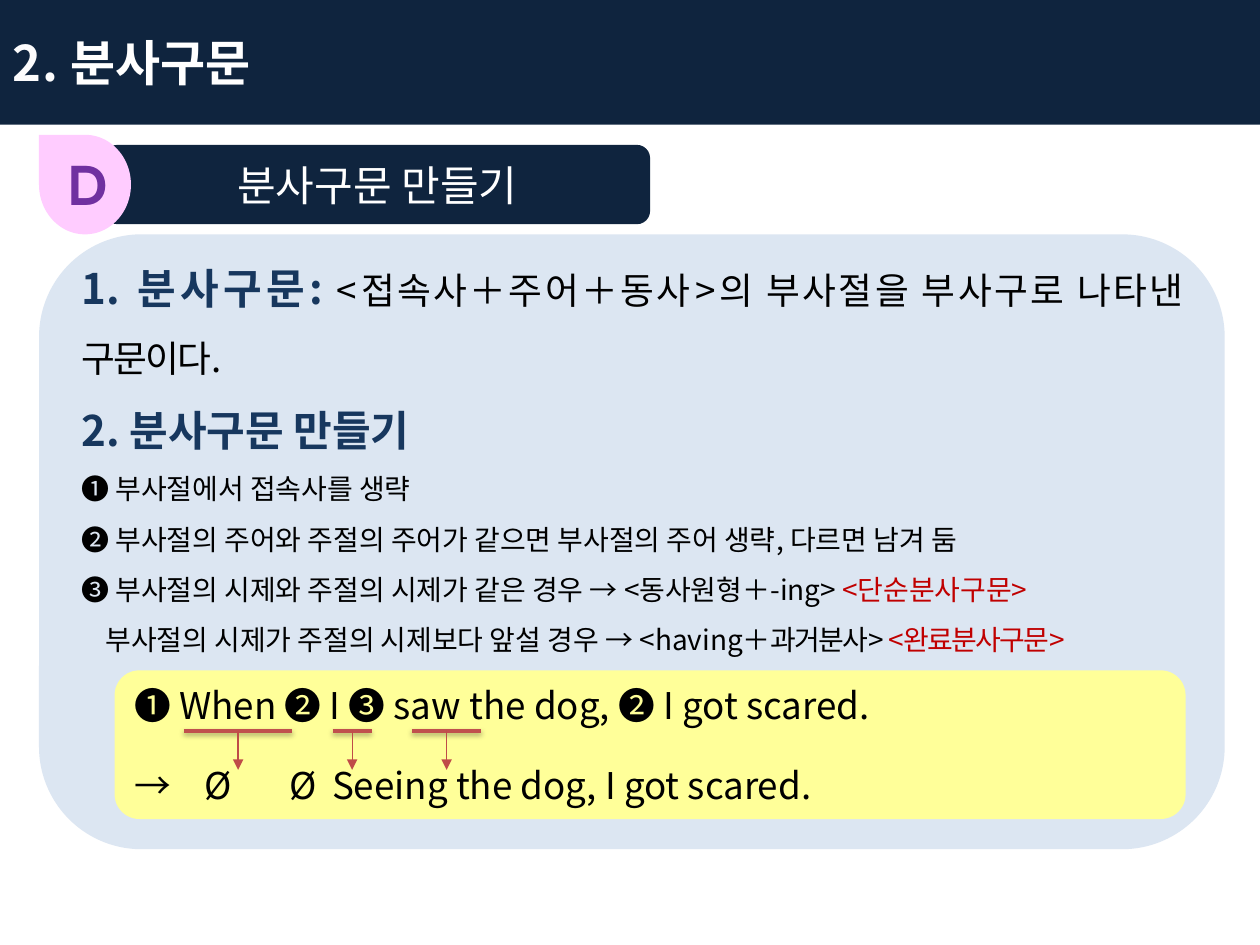
from lxml import etree
from pptx import Presentation
from pptx.dml.color import RGBColor
from pptx.enum.shapes import MSO_CONNECTOR, MSO_SHAPE
from pptx.enum.text import MSO_ANCHOR, PP_ALIGN
from pptx.oxml.ns import qn
from pptx.util import Inches, Pt

RECT, PANEL, TEARDROP = MSO_SHAPE.RECTANGLE, MSO_SHAPE.FLOWCHART_ALTERNATE_PROCESS, MSO_SHAPE.TEAR
STRAIGHT = MSO_CONNECTOR.STRAIGHT
MIDDLE, BOTTOM = MSO_ANCHOR.MIDDLE, MSO_ANCHOR.BOTTOM
LEFT, CENTER, JUSTIFY = PP_ALIGN.LEFT, PP_ALIGN.CENTER, PP_ALIGN.JUSTIFY
COLORS = {
    "navy": "0F243E", "heading": "17375E", "panel": "DCE6F2", "example": "FFFF99",
    "badge": "FFCCFF", "letter": "7030A0", "term": "C00000", "underline": "C0504D",
    "arrow": "BF4C48", "number": "FCFCFD", "white": "FFFFFF", "black": "000000",
}


class GrammarSlide:
    """Draws styled elements on one slide."""

    def __init__(self, slide, font="Noto Sans CJK KR"):
        self.shapes = slide.shapes
        self.font = font

    def color(self, name):
        return RGBColor.from_string(COLORS[name])

    def shape(self, kind, box, fill, anchor=MIDDLE):
        shape = self.shapes.add_shape(kind, *map(Inches, box))
        shape.shadow.inherit = False
        shape.fill.solid()
        shape.fill.fore_color.rgb = self.color(fill)
        shape.line.fill.background()
        shape.text_frame.word_wrap = True
        shape.text_frame.vertical_anchor = anchor
        return shape

    def style(self, font, size=None, color=None, bold=None, spacing=None, face=None):
        if size:
            font.size = Pt(size)
        if color:
            font.color.rgb = self.color(color)
        if bold is not None:
            font.bold = bold
        if face:
            font.name = face
            latin = font._element.find(qn("a:latin"))
            east_asian = etree.Element(qn("a:ea"), typeface=face)
            latin.addnext(east_asian)
        if spacing is not None:
            font._element.set("spc", str(int(spacing * 100)))

    def paragraph(self, frame, runs, size, color="black", bold=False, align=LEFT,
                  line=None, indent=0, before=0, tabs=(), face=None):
        first = frame.paragraphs[0]
        paragraph = first if not first.runs else frame.add_paragraph()
        paragraph.alignment = align
        paragraph.space_before = Pt(before)
        if line:
            paragraph.line_spacing = Pt(line)
        properties = paragraph._p.get_or_add_pPr()
        properties.set("marL", str(Inches(indent)))
        if tabs:
            stops = etree.SubElement(properties, qn("a:tabLst"))
            for position in tabs:
                etree.SubElement(stops, qn("a:tab"), pos=str(Inches(position)), algn="l")
        self.style(paragraph.font, size, color, bold, face=face or self.font)
        for words, changes in runs:
            run = paragraph.add_run()
            run.text = words
            self.style(run.font, **changes)

    def letter(self, box, words, size, color, face):
        frame = self.shapes.add_textbox(*map(Inches, box)).text_frame
        frame.word_wrap = True
        self.paragraph(frame, [(words, {})], size, color, True, face=face)

    def line(self, start, end, color, width):
        connector = self.shapes.add_connector(STRAIGHT, *map(Inches, start + end))
        connector.line.color.rgb = self.color(color)
        connector.line.width = Pt(width)
        effects = etree.SubElement(connector._element.spPr, qn("a:effectLst"))
        return connector, effects

    def underline(self, left, right, y):
        _, effects = self.line((left, y), (right, y), "underline", 2)
        shadow = etree.SubElement(effects, qn("a:outerShdw"), blurRad=str(Pt(3.1)),
                                  dist=str(Pt(1.6)), dir="5400000", rotWithShape="0")
        tint = etree.SubElement(shadow, qn("a:srgbClr"), val=COLORS["black"])
        etree.SubElement(tint, qn("a:alpha"), val="38000")

    def arrow(self, x, top, bottom):
        connector, _ = self.line((x, top), (x, bottom), "arrow", 0.75)
        etree.SubElement(connector.line._get_or_add_ln(), qn("a:tailEnd"), type="triangle")


def main():
    presentation = Presentation()
    presentation.slide_width, presentation.slide_height = Inches(10), Inches(7.5)
    page = GrammarSlide(presentation.slides.add_slide(presentation.slide_layouts[6]))

    rules = page.shape(PANEL, (0.31, 1.86, 9.41, 4.88), "panel", BOTTOM).text_frame
    rules.margin_top, rules.margin_bottom = 0, Inches(1.29)
    heading = {"size": 24, "color": "heading", "bold": True}
    term = {"color": "term"}
    page.paragraph(rules, [
        ("1. 분사구문: ", heading),
        ("<접속사＋주어＋동사>의 부사절을 부사구로 나타낸 구문이다.", {"spacing": -1}),
    ], 21, align=JUSTIFY, line=38)
    page.paragraph(rules, [("2. 분사구문 만들기", {})], **heading, align=JUSTIFY, line=43)
    steps = [
        (0, [("❶ 부사절에서 접속사를 생략", {})]),
        (0, [("❷ 부사절의 주어와 주절의 주어가 같으면 부사절의 주어 생략, 다르면 남겨 둠", {})]),
        (0, [("❸ 부사절의 시제와 주절의 시제가 같은 경우 → <동사원형＋-ing> ", {}),
             ("<단순분사구문>", term)]),
        (0.19, [("부사절의 시제가 주절의 시제보다 앞설 경우 → <having＋", {}),
                ("과거분사> ", {"spacing": -1}),
                ("<완료분사구문>", {**term, "spacing": -1})]),
    ]
    for indent, runs in steps:
        page.paragraph(rules, runs, 16, align=JUSTIFY, line=28.8, indent=indent)

    topic = page.shape(PANEL, (0.83, 1.15, 4.33, 0.63), "navy").text_frame
    page.paragraph(topic, [("분사구문 만들기", {})], 24, "white", align=CENTER)

    title = page.shape(RECT, (0, 0, 10, 0.99), "navy").text_frame
    page.paragraph(title, [("2. ", {"color": "number", "spacing": 0.5}), ("분사구문", {})],
                   28, "white", True)

    badge = page.shape(TEARDROP, (0.28, 1.1, 0.79, 0.73), "badge")
    badge.rotation = 270
    page.letter((0.44, 1.14, 0.47, 0.64), "D", 32, "letter", "Cabin")

    example = page.shape(PANEL, (0.91, 5.32, 8.5, 1.18), "example").text_frame
    example.margin_top = example.margin_bottom = 0
    page.paragraph(example, [("❶ When ❷ I ❸ saw the dog, ❷ I got scared.", {})], 21)
    page.paragraph(example, [("→\tØ\tØ\tSeeing the dog, I got scared.", {})], 21,
                   before=20.5, tabs=(0.56, 1.23, 1.57))

    underline_y = 5.8
    marked_words = [(1.46, 2.32), (2.64, 2.95), (3.27, 3.82)]
    for left, right in marked_words:
        page.underline(left, right, underline_y)
    for left, right in marked_words:
        page.arrow((left + right) / 2, underline_y, 6.11)

    presentation.save("out.pptx")


if __name__ == "__main__":
    main()
